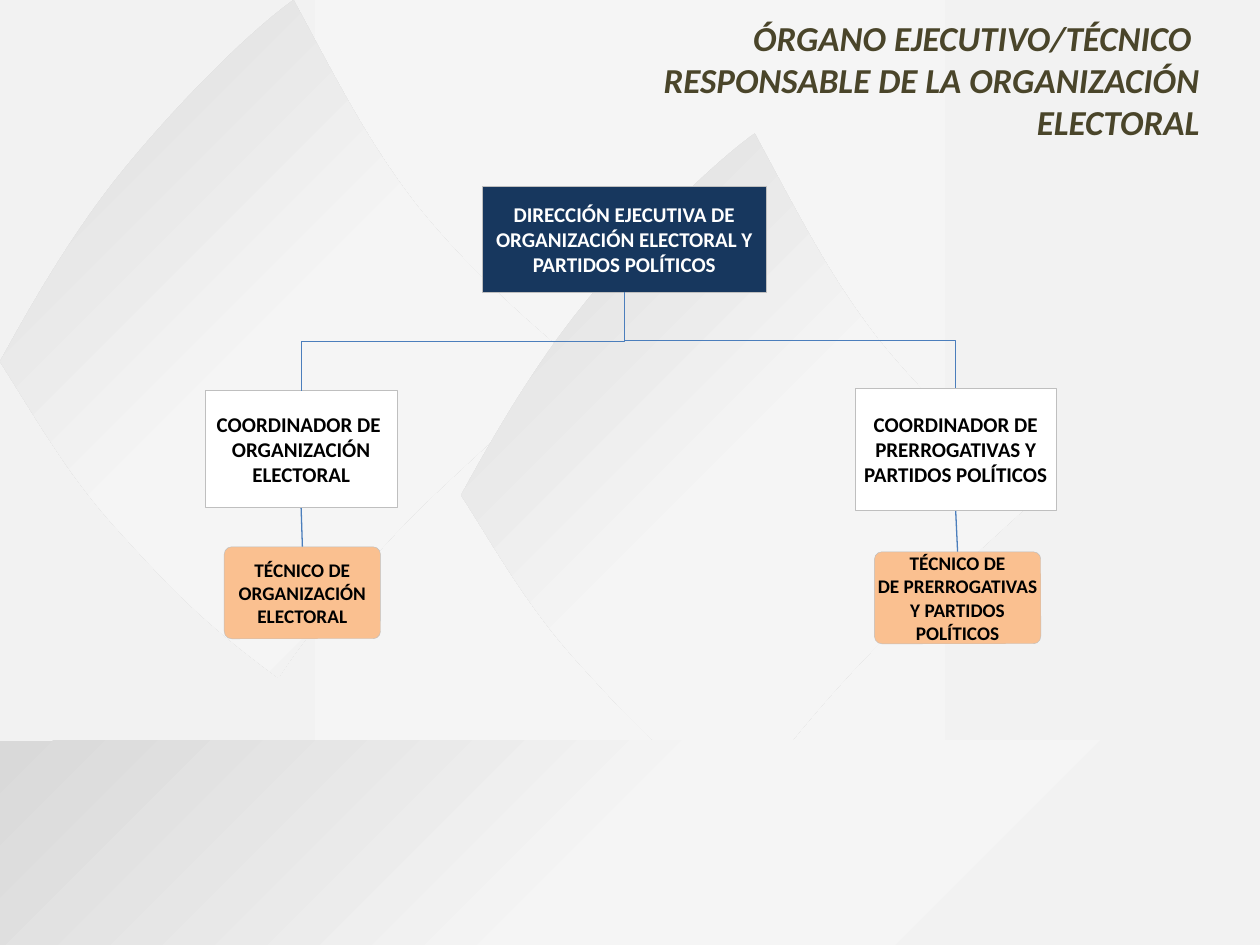
from lxml import etree
from pptx import Presentation
from pptx.dml.color import RGBColor
from pptx.enum import shapes, text
from pptx.oxml.ns import qn
from pptx.util import Inches, Pt

WHITE = RGBColor(0xFF, 0xFF, 0xFF)
BLACK = RGBColor(0, 0, 0)
NAVY = RGBColor(0x17, 0x37, 0x5E)
PEACH = RGBColor(0xFA, 0xC0, 0x90)
BORDER = RGBColor(0xBF, 0xBF, 0xBF)
LINK = RGBColor(0x4B, 0x7E, 0xBC)
OLIVE = RGBColor(0x4A, 0x45, 0x2A)
PALE, LIGHT, GREY = (RGBColor(v, v, v) for v in (0xF2, 0xF5, 0xD9))

TITLE = ["ÓRGANO EJECUTIVO/TÉCNICO ", "RESPONSABLE DE LA ORGANIZACIÓN ELECTORAL"]

# kind of post: preset, fill, font colour, size, (side, top) margins
STYLES = {
    "head": (shapes.MSO_SHAPE.RECTANGLE, NAVY, WHITE, 12, (0.08, 0)),
    "coordinator": (shapes.MSO_SHAPE.RECTANGLE, WHITE, BLACK, 12, (0.04, 0.04)),
    "technician": (shapes.MSO_SHAPE.ROUNDED_RECTANGLE, PEACH, BLACK, 11, (0, 0)),
}
# post: kind, (left, top, width, height), paragraphs
POSTS = {
    "parties": ("coordinator", (6.79, 3.08, 1.59, 0.97),
                ["COORDINADOR DE", "PRERROGATIVAS Y PARTIDOS POLÍTICOS"]),
    "direction": ("head", (3.83, 1.48, 2.25, 0.84),
                  ["DIRECCIÓN EJECUTIVA DE ORGANIZACIÓN ELECTORAL Y PARTIDOS POLÍTICOS"]),
    "organization tech": ("technician", (1.78, 4.34, 1.24, 0.73),
                          ["TÉCNICO DE", "ORGANIZACIÓN ELECTORAL"]),
    "parties tech": ("technician", (6.94, 4.38, 1.32, 0.73),
                     ["TÉCNICO DE", "DE PRERROGATIVAS Y PARTIDOS POLÍTICOS"]),
    "organization": ("coordinator", (1.63, 3.1, 1.52, 0.93),
                     ["COORDINADOR DE ", "ORGANIZACIÓN ELECTORAL"]),
}
BRANCHES = [("direction", "parties"), ("direction", "organization")]
STEMS = [("organization", "organization tech"), ("parties", "parties tech")]

LEAF_START = (0, 2.87)
LEAF_CURVES = [  # two control points and the end of each curve
    ((0.24, 2.43), (0.58, 1.84), (0.97, 1.36)),
    ((1.36, 0.88), (1.94, 0.28), (2.33, 0)),
    ((2.7, 0.69), (2.93, 1.14), (3.3, 1.62)),
    ((3.68, 2.1), (4.18, 2.55), (4.58, 2.88)),
    ((4.19, 3.24), (3.79, 3.6), (3.4, 3.97)),
    ((3.01, 4.34), (2.42, 5.04), (2.21, 5.38)),
    ((1.6, 4.93), (1.35, 4.66), (0.94, 4.21)),
    ((0.53, 3.76), (0.3, 3.34), LEAF_START),
]
LEAF_OFFSETS = [(0, 0), (3.66, 1.06)]


def shade(shape, first, angle):
    """Three-stop gradient, angle in degrees clockwise; no outline or shadow."""
    shape.shadow.inherit = False
    shape.line.fill.background()
    shape.fill.gradient()
    gradient = shape._element.spPr.find(qn("a:gradFill"))
    stops = gradient.find(qn("a:gsLst"))
    for stop in list(stops):
        stops.remove(stop)
    for percent, color in ((0, first), (50, LIGHT), (100, PALE)):
        stop = etree.SubElement(stops, qn("a:gs"), pos=str(percent * 1000))
        etree.SubElement(stop, qn("a:srgbClr"), val=str(color))
    gradient.find(qn("a:lin")).set("ang", str(angle * 60000))


def add_leaf(slide, left, top):
    """Outline through the curve ends, whose sides are then bent into curves."""
    outline = slide.shapes.build_freeform(*map(Inches, LEAF_START))
    outline.add_line_segments(
        [tuple(map(Inches, end)) for _, _, end in LEAF_CURVES], close=True)
    leaf = outline.convert_to_shape(Inches(left), Inches(top))
    sides = list(leaf._element.iter(qn("a:lnTo")))
    for side, curve in zip(sides, LEAF_CURVES):
        bend = etree.Element(qn("a:cubicBezTo"))
        for x, y in curve:
            etree.SubElement(bend, qn("a:pt"), x=str(Inches(x)), y=str(Inches(y)))
        side.getparent().replace(side, bend)
    return leaf


def write(frame, lines, size, color, align, italic=None):
    frame.text = "\n".join(lines)
    for paragraph in frame.paragraphs:
        paragraph.alignment = align
        font = paragraph.font
        font.name, font.size, font.bold, font.italic = "Calibri", Pt(size), True, italic
        font.color.rgb = color


def add_post(slide, kind, box, lines):
    preset, fill, color, size, (side, top) = STYLES[kind]
    post = slide.shapes.add_shape(preset, *map(Inches, box))
    post.shadow.inherit = False
    if kind == "technician":
        post.adjustments[0] = 0.08
    post.fill.solid()
    post.fill.fore_color.rgb = fill
    post.line.color.rgb = BORDER
    post.line.width = Pt(0.25)
    frame = post.text_frame
    frame.word_wrap = True
    frame.vertical_anchor = text.MSO_ANCHOR.MIDDLE
    frame.margin_left = frame.margin_right = Inches(side)
    frame.margin_top = frame.margin_bottom = Inches(top)
    write(frame, lines, size, color, text.PP_ALIGN.CENTER)


def add_link(slide, kind, ends):
    link = slide.shapes.add_connector(kind, *map(Inches, ends))
    link.line.color.rgb = LINK
    link.line.width = Pt(0.75)
    etree.SubElement(link._element.spPr, qn("a:effectLst"))
    return link


def link_ends(upper, lower):
    """Bottom centre of the upper post and top centre of the lower one."""
    (x1, y1, w1, h1), (x2, y2, w2, _) = POSTS[upper][1], POSTS[lower][1]
    return x1 + w1 / 2, y1 + h1, x2 + w2 / 2, y2


def add_branch(slide, upper, lower):
    """Elbow that leaves downwards: a sideways elbow turned by a quarter."""
    x1, y1, x2, y2 = link_ends(upper, lower)
    to_right = x2 > x1
    center_x, center_y = (x1 + x2) / 2, (y1 + y2) / 2
    half_w, half_h = (y2 - y1) / 2, abs(x2 - x1) / 2
    if to_right:
        half_w = -half_w
    link = add_link(slide, shapes.MSO_CONNECTOR.ELBOW,
                    (center_x - half_w, center_y - half_h,
                     center_x + half_w, center_y + half_h))
    turn = 270 if to_right else 90
    link._element.spPr.find(qn("a:xfrm")).set("rot", str(turn * 60000))


def main():
    deck = Presentation()
    deck.slide_width, deck.slide_height = Inches(10), Inches(7.5)
    slide = deck.slides.add_slide(deck.slide_layouts[6])

    def add_panel(*box):
        return slide.shapes.add_shape(shapes.MSO_SHAPE.RECTANGLE, *map(Inches, box))

    shade(add_panel(0, 0, 10, 7.5), PALE, 180)
    for offset in LEAF_OFFSETS:
        shade(add_leaf(slide, *offset), GREY, 45)
    shade(add_panel(0, 5.88, 10, 1.64), GREY, 45)

    for stem in STEMS:
        add_link(slide, shapes.MSO_CONNECTOR.STRAIGHT, link_ends(*stem))
    for post in POSTS.values():
        add_post(slide, *post)

    title = slide.shapes.add_textbox(*map(Inches, (3.82, 0.08, 5.85, 0.77))).text_frame
    title.word_wrap = False
    title.auto_size = text.MSO_AUTO_SIZE.SHAPE_TO_FIT_TEXT
    title.margin_right = Inches(0.15)
    write(title, TITLE, 20, OLIVE, text.PP_ALIGN.RIGHT, italic=True)

    for branch in BRANCHES:
        add_branch(slide, *branch)

    deck.save("out.pptx")


if __name__ == "__main__":
    main()
